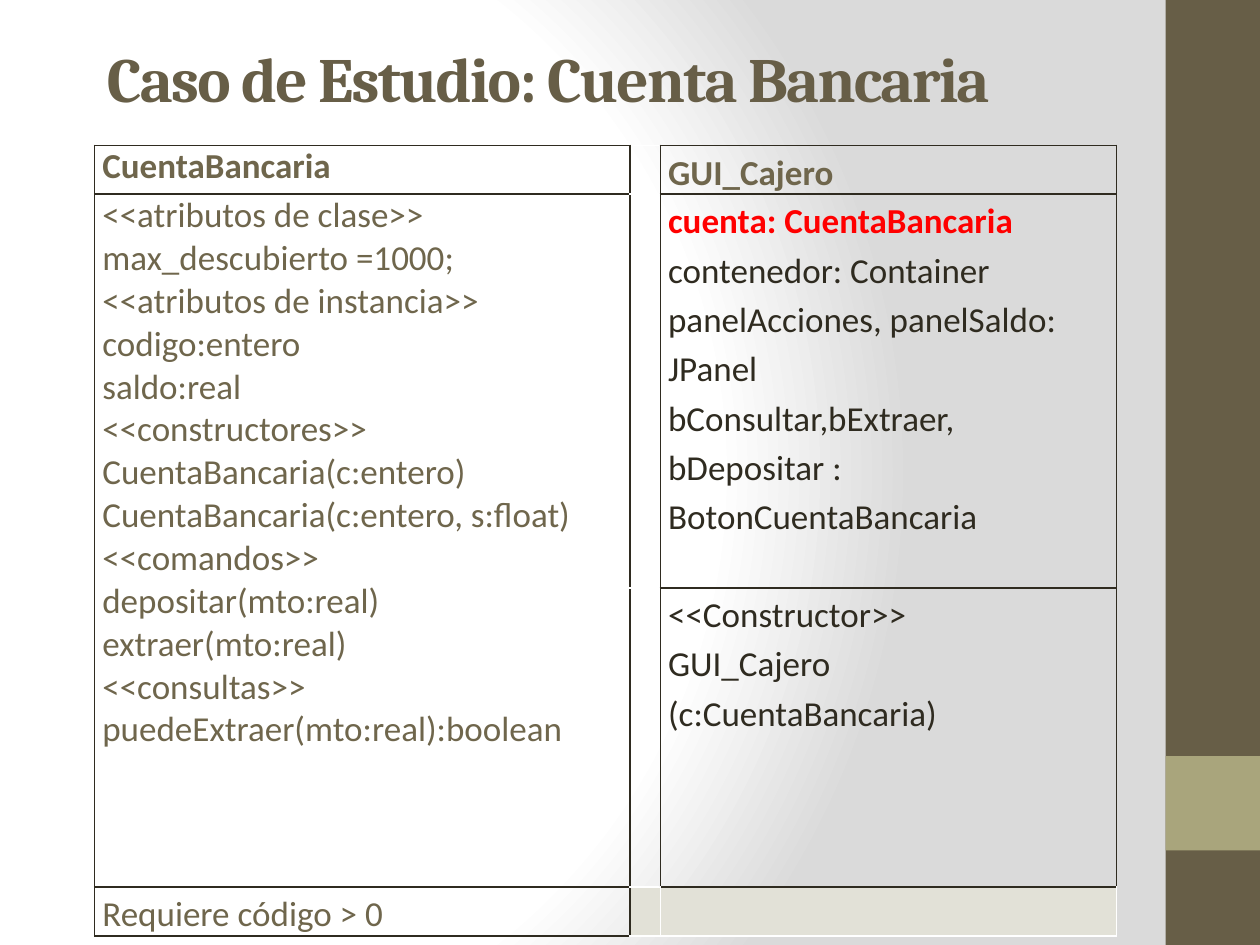
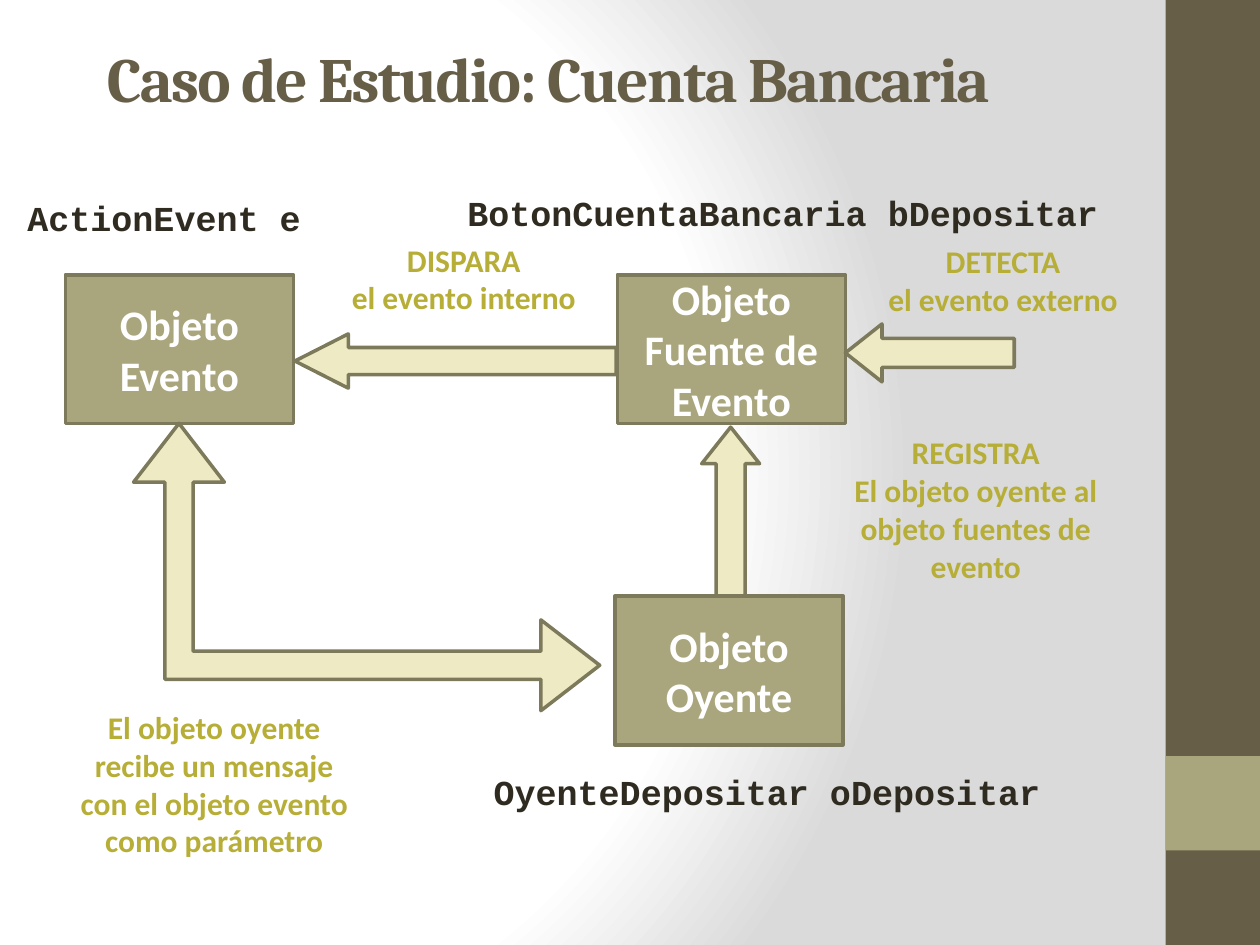
"""Builds two slides on the bank account case study: class diagram and event flow."""
from lxml import etree
from pptx import Presentation
from pptx.dml.color import RGBColor
from pptx.enum.shapes import MSO_SHAPE
from pptx.enum.text import MSO_ANCHOR, PP_ALIGN
from pptx.oxml import parse_xml
from pptx.util import Pt

RECT, UP, LEFT_UP = MSO_SHAPE.RECTANGLE, MSO_SHAPE.UP_ARROW, MSO_SHAPE.LEFT_UP_ARROW
MIDDLE, TOP = MSO_ANCHOR.MIDDLE, MSO_ANCHOR.TOP
CENTER, LEFT = PP_ALIGN.CENTER, PP_ALIGN.LEFT
NS = "http://schemas.openxmlformats.org/drawingml/2006/main"

BROWN, OLIVE, OUTLINE, CREAM = "675E47", "A9A57C", "7D7A5C", "EDEAC4"
INK, MUTED, GOLD, RED = "2F2B20", "6F664C", "B7AE38", "FF0000"
WHITE, GREY, PALE = "FFFFFF", "DADADA", "E2E1D7"
BODY, HEAD, CODE = "Calibri", "Cambria", "Courier New"

TITLE = "Caso de Estudio: Cuenta Bancaria"
BANDS = [(0, 540, BROWN), (432, 54, OLIVE)]

COLS = [306, 17.3, 260.7]
ROWS = [28, 225, 171, 28]
ACCOUNT = """<<atributos de clase>>
max_descubierto =1000;
<<atributos de instancia>>
codigo:entero
saldo:real
<<constructores>>
CuentaBancaria(c:entero)
CuentaBancaria(c:entero, s:float)
<<comandos>>
depositar(mto:real)
extraer(mto:real)
<<consultas>>
puedeExtraer(mto:real):boolean"""
FIELDS = """cuenta: CuentaBancaria
contenedor: Container
panelAcciones, panelSaldo: JPanel
bConsultar,bExtraer, bDepositar : BotonCuentaBancaria"""
CELLS = {
    (0, 0): ("CuentaBancaria", dict(color=MUTED, bold=True)),
    (1, 0): (ACCOUNT, dict(color=MUTED)),
    (3, 0): ("Requiere código > 0", dict(color=MUTED, spacing=1.15)),
    (0, 2): ("GUI_Cajero", dict(color=MUTED, bold=True, spacing=1.15)),
    (1, 2): (FIELDS, dict(spacing=1.15, lead=RED)),
    (2, 2): ("<<Constructor>>\nGUI_Cajero\n(c:CuentaBancaria)", dict(spacing=1.15)),
}
SHADED = [(3, 1), (3, 2)]
WHITE_EDGES = {(0, 1): "TB", (1, 1): "TB", (2, 1): "TB", (3, 1): "TRB", (3, 2): "LRB"}

BOX_SIZE = (130.3, 85)
BOXES = [
    ("Objeto Fuente de Evento", 352.8, 157),
    ("Objeto Oyente", 351.4, 340.6),
    ("Objeto Evento", 37.4, 157),
]
ARROWS = [
    (LEFT_UP, (127.4, 190.8, 164.2, 266.4), 90, (0.098, 0.158, 0.205)),
    (UP, (244.8, 114.5, 31, 183.6), 270, (0.5, 0.985)),
    (UP, (401, 244.1, 33.1, 96.5), 0, (0.5, 0.632)),
    (UP, (514.8, 153.4, 33.1, 96.5), 270, (0.5, 0.632)),
]
OBJECTS = [
    ("OyenteDepositar oDepositar", (275, 437, 414, 31.7)),
    ("BotonCuentaBancaria bDepositar", (260, 105.8, 412, 31.7)),
    ("ActionEvent e", (8.6, 108.7, 285, 31.7)),
]
NOTES = [
    ("DETECTA\nel evento externo", (494, 134.6, 158.4, 51)),
    ("DISPARA\nel evento interno", (168.5, 134, 193, 51)),
    ("El objeto oyente recibe un mensaje con el objeto evento como parámetro",
     (37.4, 401, 170, 94.3)),
    ("REGISTRA\nEl objeto oyente al objeto fuentes de evento", (478, 244.1, 159.1, 94.3)),
]


def rgb(value):
    """Turn a hex string into a colour."""
    return RGBColor.from_string(value)


def write(tf, text, size=20, font=BODY, color=INK, bold=False, align=LEFT,
          anchor=TOP, spacing=None, lead=None, track=None):
    """Fill a text frame, one paragraph a line; lead colours a bold first line."""
    tf.word_wrap = True
    tf.vertical_anchor = anchor
    for i, line in enumerate(text.split("\n")):
        p = tf.add_paragraph() if i else tf.paragraphs[0]
        p.alignment = align
        p.line_spacing = spacing
        r = p.add_run()
        r.text = line
        is_lead = bool(lead) and i == 0
        r.font.size, r.font.name = Pt(size), font
        r.font.bold = bold or is_lead
        r.font.color.rgb = rgb(lead if is_lead else color)
        if track:
            r.font._element.set("spc", str(track))


def add_text(s, text, box, **fmt):
    """Add a text box."""
    write(s.shapes.add_textbox(*map(Pt, box)).text_frame, text, **fmt)


def add_block(s, kind, box, fill, line=None):
    """Add a flat preset shape."""
    sp = s.shapes.add_shape(kind, *map(Pt, box))
    sp.shadow.inherit = False
    sp.fill.solid()
    sp.fill.fore_color.rgb = rgb(fill)
    if line:
        sp.line.color.rgb = rgb(line)
        sp.line.width = Pt(2)
    else:
        sp.line.fill.background()
    return sp


def add_base(prs):
    """Add a slide with its background, side bands and title."""
    s = prs.slides.add_slide(prs.slide_layouts[6])
    s.background.fill.gradient()
    old = s.element.xpath(".//p:bgPr/a:gradFill")[0]
    stops = "".join(f'<a:gs pos="{pos}000"><a:srgbClr val="{color}"/></a:gs>'
                    for pos, color in [(0, WHITE), (75, WHITE), (100, GREY)])
    old.getparent().replace(old, parse_xml(
        f'<a:gradFill xmlns:a="{NS}" rotWithShape="1"><a:gsLst>{stops}</a:gsLst>'
        '<a:path path="circle"><a:fillToRect l="20000" t="50000" r="100000" b="50000"/>'
        '</a:path></a:gradFill>'))
    for top, height, color in BANDS:
        add_block(s, RECT, (666, top, 54, height), color)
    add_text(s, TITLE, (54, 0, 612, 88.6), size=36, font=HEAD, color=BROWN,
             bold=True, anchor=MIDDLE, track=-100)
    return s


def set_borders(cell, white):
    """Draw the four cell edges, those named in white in that colour."""
    tc_pr = cell._tc.get_or_add_tcPr()
    for i, side in enumerate("LRTB"):
        ln = etree.Element(f"{{{NS}}}ln{side}", w=str(Pt(1)))
        fill = etree.SubElement(ln, f"{{{NS}}}solidFill")
        etree.SubElement(fill, f"{{{NS}}}srgbClr", val=WHITE if side in white else INK)
        tc_pr.insert(i, ln)


def add_classes(s):
    """Add the table with the two classes."""
    box = (54, 83, sum(COLS), sum(ROWS))
    table = s.shapes.add_table(len(ROWS), len(COLS), *map(Pt, box)).table
    table.first_row = table.horz_banding = False
    for col, width in zip(table.columns, COLS):
        col.width = Pt(width)
    for row, height in zip(table.rows, ROWS):
        row.height = Pt(height)
    for i in range(len(ROWS)):
        for j in range(len(COLS)):
            cell = table.cell(i, j)
            cell.margin_left = cell.margin_right = Pt(4.5)
            cell.margin_top = cell.margin_bottom = 0
            if (i, j) in SHADED:
                cell.fill.solid()
                cell.fill.fore_color.rgb = rgb(PALE)
            else:
                cell.fill.background()
            set_borders(cell, WHITE_EDGES.get((i, j), ""))
            if (i, j) in CELLS:
                text, fmt = CELLS[i, j]
                write(cell.text_frame, text, **fmt)
    table.cell(1, 0).merge(table.cell(2, 0))


def add_flow(s):
    """Add the diagram of the objects that take part in an event."""
    for text, left, top in BOXES:
        sp = add_block(s, RECT, (left, top, *BOX_SIZE), OLIVE, OUTLINE)
        write(sp.text_frame, text, size=24, color=WHITE, bold=True,
              align=CENTER, anchor=MIDDLE)
    for kind, box, turn, adjustments in ARROWS:
        sp = add_block(s, kind, box, CREAM, OUTLINE)
        sp.rotation = turn
        for i, value in enumerate(adjustments):
            sp.adjustments[i] = value
    for text, box in OBJECTS:
        add_text(s, text, box, font=CODE, bold=True)
    for text, box in NOTES:
        add_text(s, text, box, size=18, color=GOLD, bold=True, align=CENTER)


def main():
    """Build and save the presentation."""
    prs = Presentation()
    prs.slide_width, prs.slide_height = Pt(720), Pt(540)
    add_classes(add_base(prs))
    add_flow(add_base(prs))
    prs.save("out.pptx")


if __name__ == "__main__":
    main()
